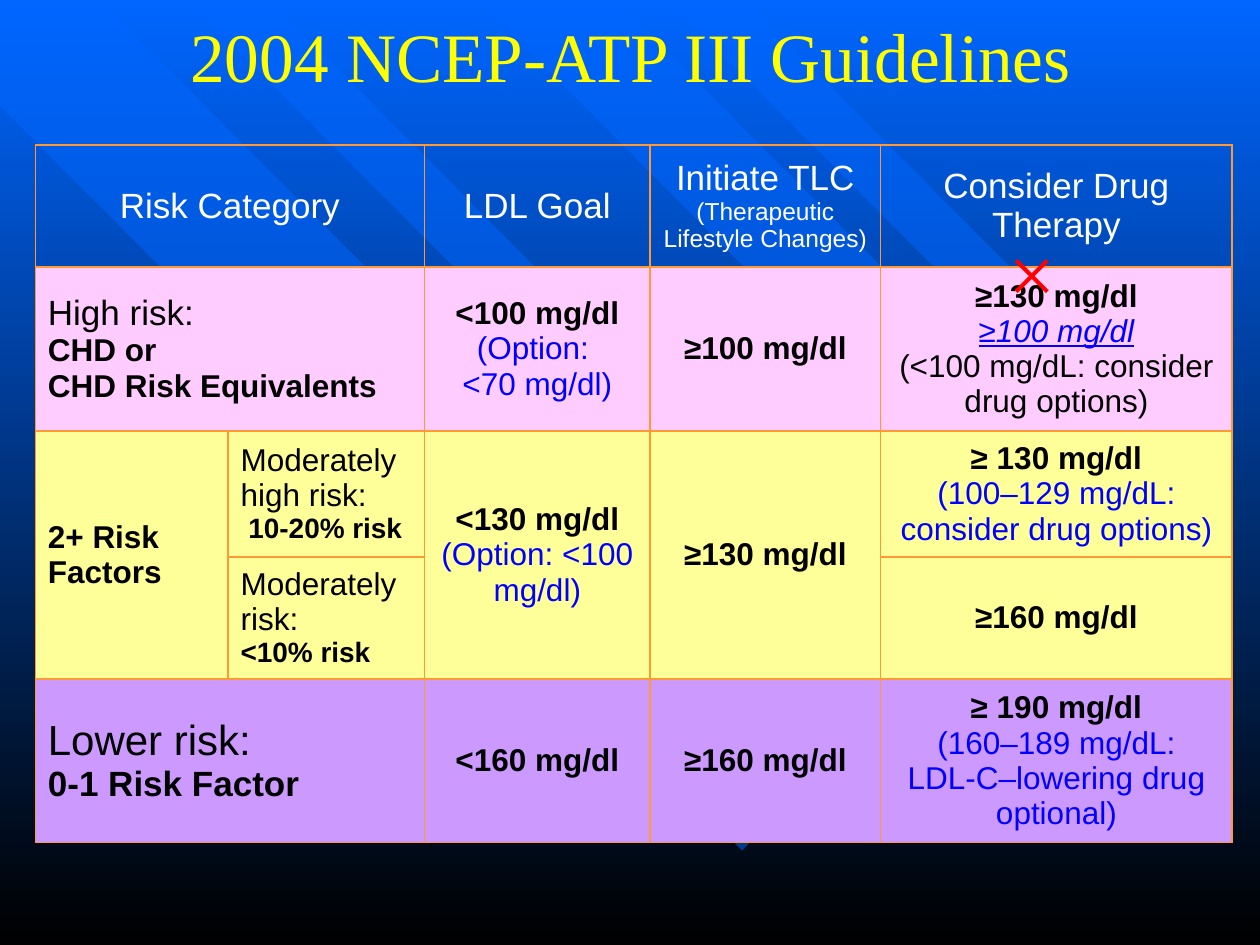
from dataclasses import dataclass

from lxml import etree
from pptx import Presentation
from pptx.dml.color import RGBColor
from pptx.enum.text import MSO_ANCHOR, PP_ALIGN
from pptx.oxml.ns import qn
from pptx.util import Inches, Pt

LEFT, CENTER = PP_ALIGN.LEFT, PP_ALIGN.CENTER
MIDDLE = MSO_ANCHOR.MIDDLE


@dataclass(frozen=True)
class Theme:
    blue: str = "0066FF"
    black: str = "000000"
    white: str = "FFFFFF"
    title: str = "FFFF00"
    update: str = "0000FF"
    cross: str = "FF0000"
    border: str = "FF9933"
    high: str = "FFCCFF"
    moderate: str = "FFFF99"
    lower: str = "CC99FF"
    serif: str = "Times New Roman"
    sans: str = "Arial"
    title_size: float = 39.6
    cross_size: int = 48
    large: int = 24
    heading: int = 20
    body: int = 18
    small: int = 16
    note: int = 14


T = Theme()


def write(frame, lines, align=CENTER, face=T.sans):
    """Write one paragraph per (text, size, colour, emphasis) line."""
    for i, (text, size, color, emphasis) in enumerate(lines):
        paragraph = frame.paragraphs[0] if i == 0 else frame.add_paragraph()
        paragraph.text = text
        paragraph.alignment = align
        font = paragraph.font
        font.name, font.size = face, Pt(size)
        font.color.rgb = RGBColor.from_string(color)
        font.bold = "b" in emphasis
        font.italic = "i" in emphasis
        font.underline = "u" in emphasis


def add_border(cell):
    """Draw all four edges of a cell; edges must precede the cell fill."""
    properties = cell._tc.get_or_add_tcPr()
    for i, edge in enumerate(("a:lnL", "a:lnR", "a:lnT", "a:lnB")):
        line = etree.Element(qn(edge), w=str(Pt(1)))
        fill = etree.SubElement(line, qn("a:solidFill"))
        etree.SubElement(fill, qn("a:srgbClr"), val=T.border)
        properties.insert(i, line)


prs = Presentation()
prs.slide_width, prs.slide_height = Inches(10), Inches(7.5)
slide = prs.slides.add_slide(prs.slide_layouts[6])

# Background gradient, blue at the top to black
background = slide.background.fill
background.gradient()
background.gradient_angle = 270
for stop, color, position in zip(background.gradient_stops, (T.blue, T.black), (0, 1)):
    stop.color.rgb = RGBColor.from_string(color)
    stop.position = position

# Translucent diagonal bands
bands = [
    [(6.7, 5.93), (0.79, 0), (0, 0), (0, 0.84), (5.89, 6.75)],
    [(2.14, 0), (7.38, 5.27), (7.06, 5.59), (1.49, 0)],
    [(4.89, 0), (8.76, 3.89), (8.21, 4.44), (3.8, 0)],
    [(5.3, 0), (8.97, 3.68), (9.27, 3.38), (5.91, 0)],
]
for corners in bands:
    points = [(Inches(x), Inches(y)) for x, y in corners]
    builder = slide.shapes.build_freeform(*points[0])
    builder.add_line_segments(points[1:], close=True)
    band = builder.convert_to_shape()
    band.shadow.inherit = False
    band.line.fill.background()
    band.fill.solid()
    band.fill.fore_color.rgb = RGBColor.from_string(T.blue)
    band_color = band._element.spPr.find(".//" + qn("a:srgbClr"))
    etree.SubElement(band_color, qn("a:alpha"), val="50000")

# Title
title = slide.shapes.add_textbox(Inches(0.42), Inches(0.12), Inches(9.17), Inches(0.63)).text_frame
title.word_wrap = True
title.vertical_anchor = MIDDLE
write(title, [("2004 NCEP-ATP III Guidelines", T.title_size, T.title, "")], face=T.serif)

# Guideline table: size, row fills and merged cells
column_widths = [1.53, 1.56, 1.79, 1.83, 2.79]
row_heights = [0.97, 1.22, 0.94, 0.91, 1.25]
row_fills = [None, T.high, T.moderate, T.moderate, T.lower]
merges = [((0, 0), (0, 1)), ((1, 0), (1, 1)), ((4, 0), (4, 1)),
          ((2, 0), (3, 0)), ((2, 2), (3, 2)), ((2, 3), (3, 3))]

guidelines = slide.shapes.add_table(
    len(row_heights), len(column_widths), Inches(0.28), Inches(1.15),
    Inches(sum(column_widths)), Inches(sum(row_heights))).table
guidelines.first_row = guidelines.horz_banding = False
for column, width in zip(guidelines.columns, column_widths):
    column.width = Inches(width)
for row, height, color in zip(guidelines.rows, row_heights, row_fills):
    row.height = Inches(height)
    for cell in row.cells:
        cell.vertical_anchor = MIDDLE
        if color:
            cell.fill.solid()
            cell.fill.fore_color.rgb = RGBColor.from_string(color)
        else:
            cell.fill.background()
        add_border(cell)
for start, end in merges:
    guidelines.cell(*start).merge(guidelines.cell(*end))

# Line styles: size, colour, emphasis
HEAD = (T.heading, T.white, "")
NOTE = (T.note, T.white, "")
RISK = (T.heading, T.black, "")
PLAIN = (T.body, T.black, "")
BOLD = (T.body, T.black, "b")
RANGE = (T.small, T.black, "b")
UPDATE = (T.body, T.update, "")
REVISED = (T.body, T.update, "iu")

# Table text by row and column
content = {
    (0, 0): [("Risk Category", *HEAD)],
    (0, 2): [("LDL Goal", *HEAD)],
    (0, 3): [("Initiate TLC", *HEAD), ("(Therapeutic Lifestyle Changes)", *NOTE)],
    (0, 4): [("Consider Drug Therapy", *HEAD)],
    (1, 0): [("High risk:", *RISK), ("CHD or", *BOLD), ("CHD Risk Equivalents", *BOLD)],
    (1, 2): [("<100 mg/dl", *BOLD), ("(Option: ", *UPDATE), ("<70 mg/dl)", *UPDATE)],
    (1, 3): [("≥100 mg/dl", *BOLD)],
    (1, 4): [("≥130 mg/dl", *BOLD), ("≥100 mg/dl", *REVISED),
             ("(<100 mg/dL: consider drug options)", *PLAIN)],
    (2, 0): [("2+ Risk Factors", *BOLD)],
    (2, 1): [("Moderately high risk:", *PLAIN), (" 10-20% risk", *RANGE)],
    (2, 2): [("<130 mg/dl", *BOLD), ("(Option: <100 mg/dl)", *UPDATE)],
    (2, 3): [("≥130 mg/dl", *BOLD)],
    (2, 4): [("≥ 130 mg/dl", *BOLD), ("(100–129 mg/dL:\nconsider drug options)", *UPDATE)],
    (3, 1): [("Moderately risk:", *PLAIN), ("<10% risk", *RANGE)],
    (3, 4): [("≥160 mg/dl", *BOLD)],
    (4, 0): [("Lower risk:", T.large, T.black, ""), ("0-1 Risk Factor", T.heading, T.black, "b")],
    (4, 2): [("<160 mg/dl", *BOLD)],
    (4, 3): [("≥160 mg/dl", *BOLD)],
    (4, 4): [("≥ 190 mg/dl", *BOLD),
             ("(160–189 mg/dL:\nLDL-C–lowering drug optional)", *UPDATE)],
}
for (row, column), lines in content.items():
    align = LEFT if row > 0 and column < 2 else CENTER
    write(guidelines.cell(row, column).text_frame, lines, align)

# Cross over the superseded drug threshold
cross = slide.shapes.add_textbox(Inches(7.91), Inches(1.7), Inches(0.53), Inches(0.9)).text_frame
cross.word_wrap = False
write(cross, [("×", T.cross_size, T.cross, "")], face=T.serif)

prs.save("out.pptx")
